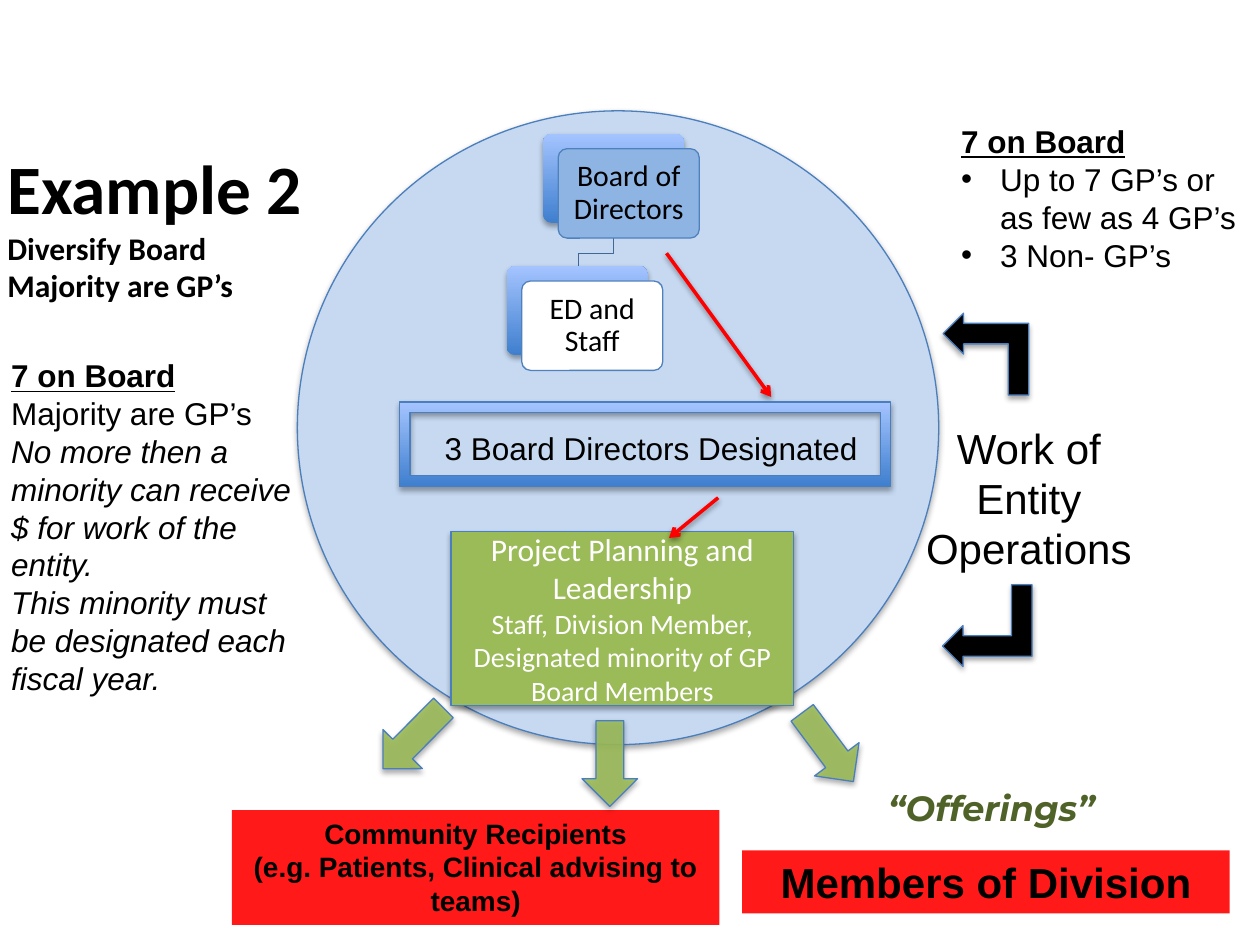
from dataclasses import dataclass
from typing import Optional

import pptx
import pptx.dml.color
import pptx.enum.dml
import pptx.enum.shapes
import pptx.enum.text
import pptx.oxml
import pptx.oxml.ns
import pptx.util
from pptx.util import Inches

SHAPE = pptx.enum.shapes.MSO_SHAPE
ALIGN = pptx.enum.text.PP_ALIGN
ANCHOR = pptx.enum.text.MSO_ANCHOR
qn = pptx.oxml.ns.qn

COLORS = {
    "black": "000000", "white": "FFFFFF", "pale blue": "C6D9F1",
    "outline": "4B7EBC", "card outline": "4F81BD", "card blue": "8EB4E3",
    "link": "3F6797", "deep blue": "3F7FCE", "light blue": "A4C4FF",
    "green": "9BBB59", "olive": "4F6228", "red": "FF0000",
}


@dataclass
class Line:
    text: str
    size: float = 18
    bold: bool = False
    italic: bool = False
    underline: bool = False
    bullet: bool = False


@dataclass
class Box:
    left: float
    top: float
    width: float
    height: float

    def lengths(self) -> list:
        return [Inches(n) for n in (self.left, self.top, self.width, self.height)]


@dataclass
class Card:
    text: str
    left: float
    top: float
    fill: str


@dataclass
class Arrow:
    kind: int
    box: Box
    rotation: float
    fill: str
    alpha: int = 100
    flip: bool = False


def rgb(name: str):
    return pptx.dml.color.RGBColor.from_string(COLORS[name])


def add_xml(parent, xml: str):
    namespace = pptx.oxml.ns.nsdecls("a")
    head, rest = xml.split(" ", 1)
    parent.append(pptx.oxml.parse_xml(f"{head} {namespace} {rest}"))


def cast_shadow(effects, alpha: int, distance: int):
    add_xml(effects, f'<a:outerShdw blurRad="40000" dist="{distance}" dir="5400000" rotWithShape="0">'
                     f'<a:srgbClr val="000000"><a:alpha val="{alpha * 1000}"/></a:srgbClr></a:outerShdw>')


def draw_shape(kind, box: Box, fill: Optional[str], line: Optional[str] = "outline",
               shadow: bool = True, alpha: int = 100):
    shape = slide.shapes.add_shape(kind, *box.lengths())
    if fill:
        shape.fill.solid()
        shape.fill.fore_color.rgb = rgb(fill)
        if alpha < 100:
            color = shape._element.spPr.find(qn("a:solidFill"))[0]
            add_xml(color, f'<a:alpha val="{alpha * 1000}"/>')
    else:
        shape.fill.gradient()
        shape.fill.gradient_angle = 90
        for stop, name in zip(shape.fill.gradient_stops, ("deep blue", "light blue")):
            stop.color.rgb = rgb(name)
    if line:
        shape.line.color.rgb = rgb(line)
        shape.line.width = pptx.util.Pt(0.75)
    else:
        shape.line.fill.background()
    shape.shadow.inherit = False
    if shadow:
        cast_shadow(shape._element.spPr.find(qn("a:effectLst")), 35, 23000)
    return shape


def write(shape, lines: list, font: str = "Arial", color: str = "black",
          align=ALIGN.LEFT, anchor=ANCHOR.TOP, wrap: bool = True):
    frame = shape.text_frame
    frame.auto_size = pptx.enum.text.MSO_AUTO_SIZE.NONE
    frame.word_wrap = wrap
    frame.vertical_anchor = anchor
    for index, line in enumerate(lines):
        paragraph = frame.add_paragraph() if index else frame.paragraphs[0]
        paragraph.text = line.text
        paragraph.alignment = align
        if line.bullet:
            properties = paragraph._p.get_or_add_pPr()
            properties.set("marL", str(Inches(0.31)))
            properties.set("indent", str(-Inches(0.31)))
            add_xml(properties, '<a:buFont typeface="Arial"/>')
            add_xml(properties, '<a:buChar char="•"/>')
        for run in paragraph.runs:
            run.font.name = font
            run.font.size = pptx.util.Pt(line.size)
            run.font.bold = line.bold
            run.font.italic = line.italic
            run.font.underline = line.underline
            run.font.color.rgb = rgb(color)
    return frame


def draw_text(box: Box, lines: list, **style):
    return write(slide.shapes.add_textbox(*box.lengths()), lines, **style)


def draw_card(card: Card):
    draw_shape(SHAPE.ROUNDED_RECTANGLE, Box(card.left, card.top, 1.12, 0.71), None, None).adjustments[0] = 0.1
    front = draw_shape(SHAPE.ROUNDED_RECTANGLE, Box(card.left + 0.12, card.top + 0.12, 1.12, 0.71),
                       card.fill, "card outline", shadow=False)
    front.adjustments[0] = 0.1
    frame = write(front, [Line(card.text, 17)], "Calibri", align=ALIGN.CENTER, anchor=ANCHOR.MIDDLE)
    frame.margin_left = frame.margin_right = frame.margin_top = frame.margin_bottom = Inches(0.07)
    frame.paragraphs[0].line_spacing = 0.9


def draw_arrow(arrow: Arrow):
    shape = draw_shape(arrow.kind, arrow.box, arrow.fill, alpha=arrow.alpha)
    shape.rotation = arrow.rotation
    if arrow.flip:
        shape._element.spPr.find(qn("a:xfrm")).set("flipH", "1")


def draw_pointer(x1: float, y1: float, x2: float, y2: float):
    pointer = slide.shapes.add_connector(pptx.enum.shapes.MSO_CONNECTOR.STRAIGHT,
                                         Inches(x1), Inches(y1), Inches(x2), Inches(y2))
    pointer.line.color.rgb = rgb("red")
    pointer.line.width = pptx.util.Pt(2)
    properties = pointer._element.spPr
    add_xml(properties.find(qn("a:ln")), '<a:tailEnd type="arrow"/>')
    add_xml(properties, '<a:effectLst />')
    cast_shadow(properties.find(qn("a:effectLst")), 38, 20000)


def draw_staff_link():
    points = [(Inches(x), Inches(y)) for x, y in ((4.87, 1.78), (4.87, 2.01), (4.59, 2.01), (4.59, 2.11))]
    builder = slide.shapes.build_freeform(*points[0])
    builder.add_line_segments(points[1:], close=False)
    link = builder.convert_to_shape()
    link.fill.background()
    link.line.color.rgb = rgb("link")
    link.line.width = pptx.util.Pt(0.75)
    link.shadow.inherit = False


presentation = pptx.Presentation()
presentation.slide_width, presentation.slide_height = Inches(10), Inches(7.5)
slide = presentation.slides.add_slide(presentation.slide_layouts[6])

draw_shape(SHAPE.OVAL, Box(2.36, 0.88, 5.09, 5.03), "pale blue")
draw_staff_link()
for card in (Card("Board of Directors", 4.31, 1.06, "card blue"), Card("ED and Staff", 4.02, 2.11, "white")):
    draw_card(card)

title = draw_text(Box(-0.04, 1.12, 2.83, 1.33),
                  [Line("Example 2\nDiversify Board\nMajority are GP’s", bold=True)],
                  font="Calibri", anchor=ANCHOR.MIDDLE)
title.paragraphs[0].runs[0].font.size = pptx.util.Pt(39.6)
draw_text(Box(7.19, 3.3, 1.95, 1.32), [Line("Work of Entity", 24), Line("Operations", 24)], align=ALIGN.CENTER)
draw_text(Box(6.95, 6.19, 1.99, 0.44), [Line("“Offerings”", 20, bold=True, italic=True)],
          font="Montserrat", color="olive", wrap=False)

recipients = draw_shape(SHAPE.RECTANGLE, Box(1.84, 6.43, 3.87, 0.91), "red", None, False, 90)
write(recipients, [Line("Community Recipients", 16, True),
                   Line("(e.g. Patients, Clinical advising to teams)", 16, True)], align=ALIGN.CENTER)

for arrow in (
    Arrow(SHAPE.DOWN_ARROW, Box(3.06, 5.52, 0.44, 0.68), 44.8, "green", 90),
    Arrow(SHAPE.DOWN_ARROW, Box(6.35, 5.59, 0.44, 0.68), 323.3, "green", 90),
    Arrow(SHAPE.DOWN_ARROW, Box(4.62, 5.72, 0.44, 0.68), 0, "green", 90),
    Arrow(SHAPE.BENT_UP_ARROW, Box(7.5, 2.47, 0.65, 0.68), 270, "black"),
    Arrow(SHAPE.BENT_UP_ARROW, Box(7.51, 4.61, 0.65, 0.71), 270, "black", flip=True),
):
    draw_arrow(arrow)

members = draw_shape(SHAPE.RECTANGLE, Box(5.89, 6.75, 3.87, 0.5), "red", None, False, 90)
write(members, [Line("Members of Division", 24, True)], align=ALIGN.CENTER)

planning = draw_shape(SHAPE.RECTANGLE, Box(3.58, 4.22, 2.72, 1.38), "green")
write(planning, [Line("Project Planning and Leadership"),
                 Line("Staff, Division Member, Designated minority of GP Board Members", 16)],
      "Calibri", "white", ALIGN.CENTER, ANCHOR.MIDDLE)

board_heading = Line("7 on Board", bold=True, underline=True)
draw_text(Box(-0.01, 2.78, 2.47, 2.83), [
    board_heading,
    Line("Majority are GP’s"),
    Line("No more then a minority can receive $ for work of the entity.", italic=True),
    Line("This minority must be designated each fiscal year.", italic=True),
])
draw_pointer(5.29, 2.01, 6.12, 3.15)
draw_text(Box(3.43, 3.36, 3.62, 0.4), [Line("3 Board Directors Designated")])
draw_pointer(5.7, 3.95, 5.31, 4.27)
draw_shape(SHAPE.FRAME, Box(3.17, 3.19, 3.9, 0.67), None)
draw_text(Box(7.53, 0.92, 2.47, 1.31), [
    board_heading,
    Line("Up to 7 GP’s or as few as 4 GP’s", bullet=True),
    Line("3 Non- GP’s", bullet=True),
])

presentation.save("out.pptx")
